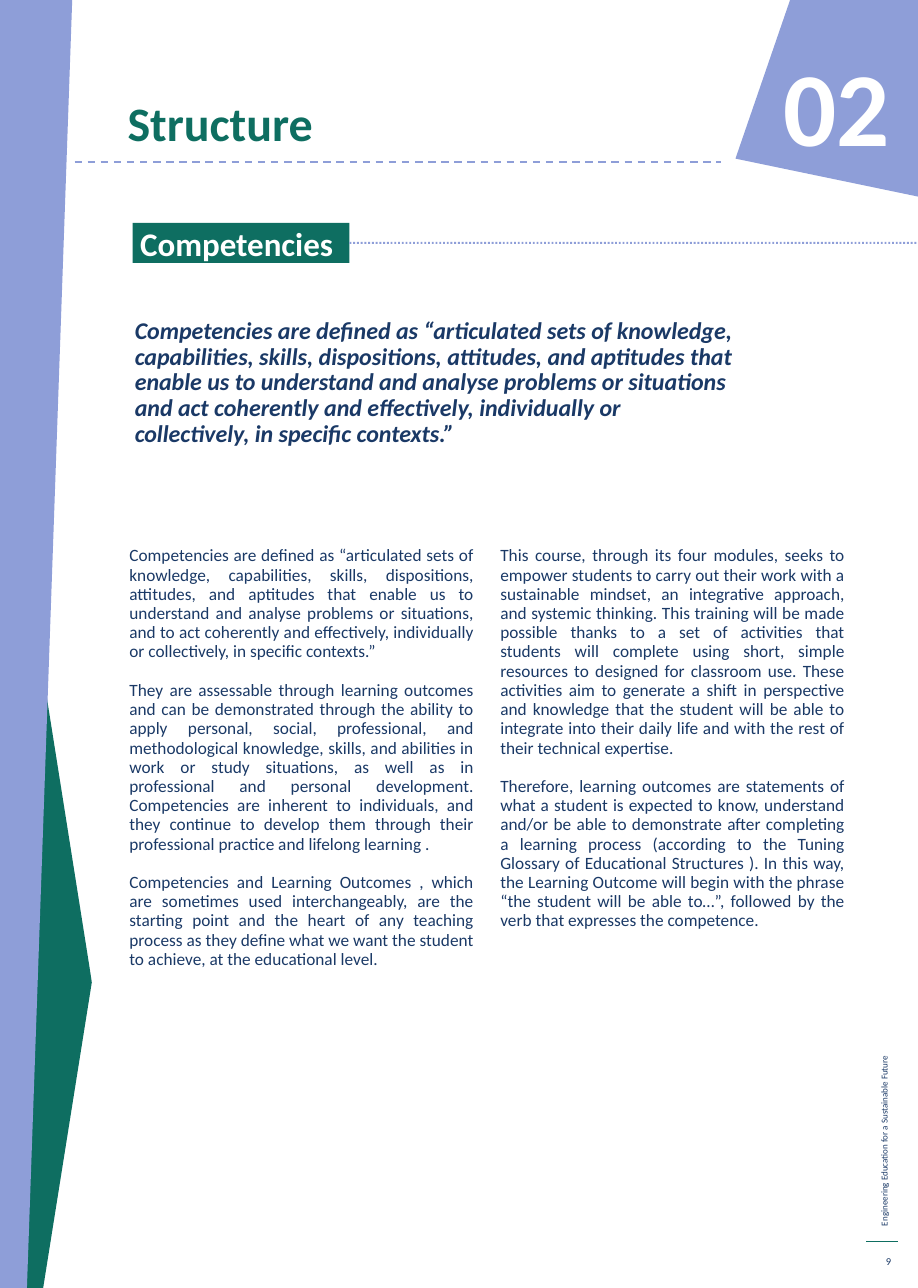
from dataclasses import dataclass

from lxml.etree import SubElement
from pptx import Presentation
from pptx.dml.color import RGBColor
from pptx.enum.dml import MSO_LINE_DASH_STYLE as Dash
from pptx.enum.shapes import MSO_CONNECTOR, MSO_SHAPE
from pptx.enum.text import MSO_ANCHOR as Anchor, MSO_AUTO_SIZE, PP_ALIGN as Align
from pptx.oxml.ns import qn
from pptx.util import Pt


@dataclass(frozen=True)
class Theme:
    font: str = "Calibri"
    green: RGBColor = RGBColor(0x0E, 0x6E, 0x61)
    lilac: RGBColor = RGBColor(0x8E, 0x9E, 0xD8)
    navy: RGBColor = RGBColor(0x1A, 0x39, 0x66)
    white: RGBColor = RGBColor(0xFF, 0xFF, 0xFF)
    number: float = 70
    title: float = 32
    heading: float = 22
    quote: float = 16
    body: float = 11.5
    page: float = 7
    footer: float = 6


theme = Theme()
WIDTH, HEIGHT = 612, 859

presentation = Presentation()
presentation.slide_width, presentation.slide_height = Pt(WIDTH), Pt(HEIGHT)
slide = presentation.slides.add_slide(presentation.slide_layouts[5])
shapes = slide.shapes


def write(shape, *texts, size, color=theme.navy, bold=False, italic=False,
          align=Align.LEFT, anchor=Anchor.TOP, spacing=None, gap=0, left=7.2):
    frame = shape.text_frame
    frame.word_wrap = True
    frame.auto_size = MSO_AUTO_SIZE.NONE
    frame.vertical_anchor = anchor
    frame.margin_left, frame.margin_right = Pt(left), Pt(7.2)
    frame.margin_top = frame.margin_bottom = Pt(3.6)
    for index, text in enumerate(texts):
        paragraph = frame.add_paragraph() if index else frame.paragraphs[0]
        paragraph.alignment = align
        paragraph.line_spacing = spacing
        paragraph.space_before = Pt(gap if index else 0)
        run = paragraph.add_run()
        run.text = text
        font = run.font
        font.name, font.size = theme.font, Pt(size)
        font.bold, font.italic = bold, italic
        font.color.rgb = color


# Side bands and corner panel
polygons = [
    (theme.green, [(28.8, HEIGHT), (16.5, HEIGHT), (16.5, 372.3), (59.8, 645.8), (61.2, 655.2)]),
    (theme.lilac, [(0, 0), (48.2, 0), (18, HEIGHT), (0, HEIGHT)]),
    (theme.lilac, [(WIDTH, 0), (526.7, 0), (490.3, 105.8), (WIDTH, 131.1)]),
]
for color, points in polygons:
    start, *others = [(Pt(x), Pt(y)) for x, y in points]
    builder = shapes.build_freeform(*start)
    builder.add_line_segments(others, close=True)
    panel = builder.convert_to_shape()
    panel.shadow.inherit = False
    panel.fill.solid()
    panel.fill.fore_color.rgb = color
    panel.line.fill.background()

# Title and section number
title = shapes.title
title.left, title.top, title.width, title.height = Pt(77.8), Pt(48.2), Pt(324.7), Pt(55.4)
write(title, "Structure", size=theme.title, color=theme.green, bold=True,
      anchor=Anchor.BOTTOM, spacing=0.74)
number = shapes.add_textbox(Pt(470.9), Pt(24.5), Pt(129.6), Pt(102.2))
write(number, "02", size=theme.number, color=theme.white, bold=True, align=Align.RIGHT)

# Section heading
heading = shapes.add_shape(MSO_SHAPE.RECTANGLE, Pt(88.5), Pt(148.7), Pt(144.5), Pt(26.6))
heading.shadow.inherit = False
heading.fill.solid()
heading.fill.fore_color.rgb = theme.green
heading.line.fill.background()
write(heading, "Competencies", size=theme.heading, color=theme.white, bold=True,
      anchor=Anchor.MIDDLE, left=5)

# Rules: under the title, beside the heading, above the page number
rules = [
    (49.7, 481, 108, theme.lilac, 1.25, Dash.DASH, None),
    (233, WIDTH, 162, theme.lilac, 1.25, Dash.ROUND_DOT, heading),
    (577.4, 599, 828, theme.green, 0.75, Dash.SOLID, None),
]
for begin, end, y, color, weight, dash, origin in rules:
    rule = shapes.add_connector(MSO_CONNECTOR.STRAIGHT, Pt(begin), Pt(y), Pt(end), Pt(y))
    if origin:
        rule.begin_connect(origin, 3)
    rule.line.color.rgb = color
    rule.line.width = Pt(weight)
    rule.line.dash_style = dash
    SubElement(rule.element.spPr, qn("a:effectLst"))

# Quotation
quote = shapes.add_textbox(Pt(82.8), Pt(208.8), Pt(415.4), Pt(126))
write(
    quote,
    "Competencies are defined as “articulated sets of knowledge, capabilities, skills, "
    "dispositions, attitudes, and aptitudes that enable us to understand and analyse problems "
    "or situations and act coherently and effectively, individually or collectively, in "
    "specific contexts.”",
    size=theme.quote, bold=True, italic=True, spacing=Pt(17.2),
)

# Body text in two columns
columns = [
    [
        "Competencies are defined as “articulated sets of knowledge, capabilities, skills, "
        "dispositions, attitudes, and aptitudes that enable us to understand and analyse "
        "problems or situations, and to act coherently and effectively, individually or "
        "collectively, in specific contexts.”",
        "They are assessable through learning outcomes and can be demonstrated through the "
        "ability to apply personal, social, professional, and methodological knowledge, skills, "
        "and abilities in work or study situations, as well as in professional and personal "
        "development. Competencies are inherent to individuals, and they continue to develop "
        "them through their professional practice and lifelong learning .",
        "Competencies and Learning Outcomes , which are sometimes used interchangeably, are the "
        "starting point and the heart of any teaching process as they define what we want the "
        "student to achieve, at the educational level.",
    ],
    [
        "This course, through its four modules, seeks to empower students to carry out their "
        "work with a sustainable mindset, an integrative approach, and systemic thinking. This "
        "training will be made possible thanks to a set of activities that students will "
        "complete using short, simple resources to designed for classroom use. These activities "
        "aim to generate a shift in perspective and knowledge that the student will be able to "
        "integrate into their daily life and with the rest of their technical expertise.",
        "Therefore, learning outcomes are statements of what a student is expected to know, "
        "understand and/or be able to demonstrate after completing a learning process "
        "(according to the Tuning Glossary of Educational Structures ). In this way, the "
        "Learning Outcome will begin with the phrase “the student will be able to…”, followed "
        "by the verb that expresses the competence.",
    ],
]
COLUMN_LEFT, COLUMN_WIDTH, COLUMN_STEP = 79.2, 243.6, 247.3
for index, texts in enumerate(columns):
    column = shapes.add_textbox(Pt(COLUMN_LEFT + index * COLUMN_STEP), Pt(360.7),
                                Pt(COLUMN_WIDTH), Pt(290))
    write(column, *texts, size=theme.body, align=Align.JUSTIFY, spacing=Pt(12.8), gap=12.8)

# Running footer and page number
footer = shapes.add_textbox(Pt(427.7), Pt(655.9), Pt(323.3), Pt(14.4))
footer.rotation = 270
write(footer, "Engineering Education for a Sustainable Future", size=theme.footer)
page_number = shapes.add_textbox(Pt(577.4), Pt(830.9), Pt(23.8), Pt(20.9))
write(page_number, "9", size=theme.page, align=Align.RIGHT, anchor=Anchor.MIDDLE)

presentation.save("out.pptx")
